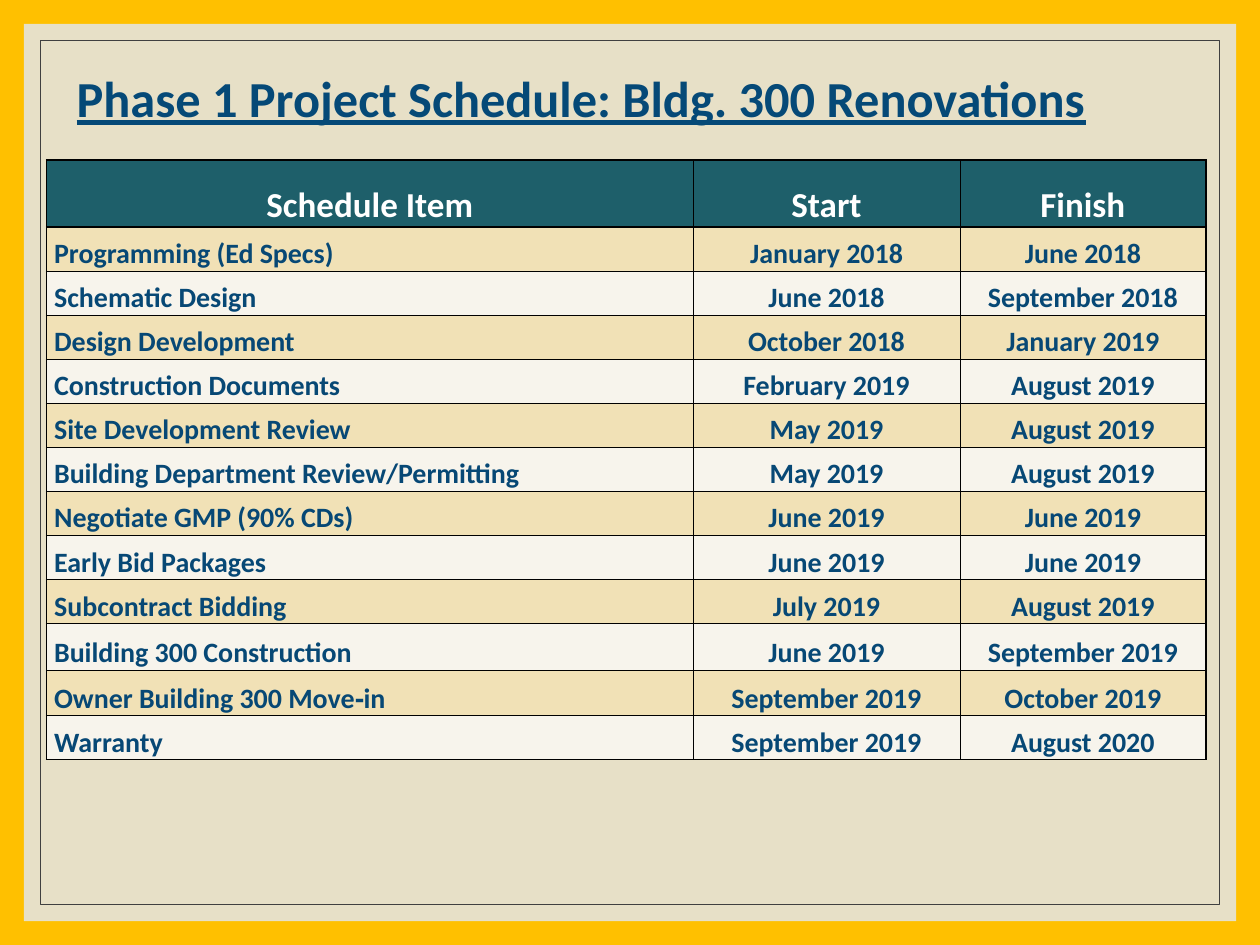
from lxml.etree import SubElement
from pptx import Presentation
from pptx.dml.color import RGBColor
from pptx.enum.shapes import MSO_SHAPE
from pptx.enum.text import MSO_ANCHOR, PP_ALIGN
from pptx.oxml.ns import qn
from pptx.util import Inches, Pt

COLORS = {
    "frame": "FFC000",
    "panel": "E7E0C7",
    "outline": "404040",
    "title": "054977",
    "header": "1E5F6A",
    "header_text": "FFFFFF",
    "body_text": "074875",
    "sand": "F6E2AE",
    "white": "FFFFFF",
    "border": "000000",
}
TITLE_FONT = {"name": "Calibri", "size": Pt(28.8), "bold": True, "underline": True}
HEADER_FONT = {"name": "Calibri", "size": Pt(20), "bold": True}
BODY_FONT = {"name": "Calibri", "size": Pt(16), "bold": True}
CELL_FORMAT = {
    "vertical_anchor": MSO_ANCHOR.BOTTOM,
    "margin_left": Inches(0.01),
    "margin_top": Inches(0.01),
    "margin_right": Inches(0.01),
    "margin_bottom": 0,
}
ITEM_INDENT = Inches(0.06)
BODY_ALPHA = 67
THIN, THICK = Pt(0.5), Pt(1)
COLUMN_WIDTHS = [5.13, 2.12, 1.95]
ROW_HEIGHTS = [0.53] + [0.35] * 9 + [0.37, 0.36, 0.35]
SCHEDULE = [
    ("Schedule Item", "Start", "Finish"),
    ("Programming (Ed Specs)", "January 2018", "June 2018"),
    ("Schematic Design", "June 2018", "September 2018"),
    ("Design Development", "October 2018", "January 2019"),
    ("Construction Documents", "February 2019", "August 2019"),
    ("Site Development Review", "May 2019", "August 2019"),
    ("Building Department Review/Permitting", "May 2019", "August 2019"),
    ("Negotiate GMP (90% CDs)", "June 2019", "June 2019"),
    ("Early Bid Packages", "June 2019", "June 2019"),
    ("Subcontract Bidding", "July 2019", "August 2019"),
    ("Building 300 Construction", "June 2019", "September 2019"),
    ("Owner Building 300 Move‐in", "September 2019", "October 2019"),
    ("Warranty", "September 2019", "August 2020"),
]


def rgb(name):
    """Return the named colour."""
    return RGBColor.from_string(COLORS[name])


def apply_format(target, values):
    """Set each attribute in values on the target."""
    for attribute, value in values.items():
        setattr(target, attribute, value)


def write_text(paragraph, wording, font, color, alignment):
    """Fill a paragraph with one formatted run."""
    paragraph.alignment = alignment
    run = paragraph.add_run()
    run.text = wording
    apply_format(run.font, font)
    run.font.color.rgb = rgb(color)


def add_backdrop(slide, left, top, width, height):
    """Place the panel and its thin inner outline in the given box."""
    slide.background.fill.solid()
    slide.background.fill.fore_color.rgb = rgb("frame")
    inset = Inches(0.13)
    panel = slide.shapes.add_shape(MSO_SHAPE.RECTANGLE, left, top, width, height)
    panel.fill.solid()
    panel.fill.fore_color.rgb = rgb("panel")
    panel.line.fill.background()
    outline = slide.shapes.add_shape(
        MSO_SHAPE.RECTANGLE, left + inset, top + inset, width - 2 * inset, height - 2 * inset
    )
    outline.fill.background()
    outline.line.color.rgb = rgb("outline")
    outline.line.width = THIN
    for rectangle in (panel, outline):
        rectangle.shadow.inherit = False


def add_title(slide, left, top, width, height):
    """Place the underlined slide title in the given box."""
    frame = slide.shapes.add_textbox(left, top, width, height).text_frame
    apply_format(frame, {"word_wrap": True, "vertical_anchor": MSO_ANCHOR.MIDDLE})
    heading = frame.paragraphs[0]
    heading.line_spacing = 0.9
    write_text(heading, "Phase 1 Project Schedule: Bldg. 300 Renovations",
               TITLE_FONT, "title", PP_ALIGN.LEFT)


def add_borders(cell, widths):
    """Draw the cell's borders from a dict of side to line width."""
    properties = cell._tc.get_or_add_tcPr()
    for side, width in widths.items():
        border = SubElement(properties, qn(f"a:ln{side}"), w=str(width))
        solid = SubElement(border, qn("a:solidFill"))
        SubElement(solid, qn("a:srgbClr"), val=COLORS["border"])


def fill_cell(cell, color, alpha):
    """Fill a cell with a colour at the given opacity in percent."""
    cell.fill.solid()
    cell.fill.fore_color.rgb = rgb(color)
    if alpha < 100:
        tint = cell._tc.tcPr.find(qn("a:solidFill")).find(qn("a:srgbClr"))
        SubElement(tint, qn("a:alpha"), val=str(alpha * 1000))


def format_cell(cell, wording, row, column):
    """Write and style one schedule cell by its row and column."""
    is_header = row == 0
    is_item = column == 0 and not is_header
    apply_format(cell, CELL_FORMAT)
    if is_item:
        cell.margin_left = ITEM_INDENT
    write_text(
        cell.text_frame.paragraphs[0],
        wording,
        HEADER_FONT if is_header else BODY_FONT,
        "header_text" if is_header else "body_text",
        PP_ALIGN.LEFT if is_item else PP_ALIGN.CENTER,
    )
    add_borders(cell, {
        "L": THICK if column == 0 else THIN,
        "R": THICK if column == len(COLUMN_WIDTHS) - 1 else THIN,
        "T": THICK if row <= 1 else THIN,
        "B": THICK if row in (0, len(SCHEDULE) - 1) else THIN,
    })
    if is_header:
        fill_cell(cell, "header", 100)
    else:
        fill_cell(cell, "sand" if row % 2 else "white", BODY_ALPHA)


def add_schedule(slide, left, top, width, height):
    """Place the schedule table in the given box."""
    table = slide.shapes.add_table(
        len(SCHEDULE), len(COLUMN_WIDTHS), left, top, width, height
    ).table
    for column, column_width in zip(table.columns, COLUMN_WIDTHS):
        column.width = Inches(column_width)
    for row, row_height in zip(table.rows, ROW_HEIGHTS):
        row.height = Inches(row_height)
    for row, entries in enumerate(SCHEDULE):
        for column, wording in enumerate(entries):
            format_cell(table.cell(row, column), wording, row, column)


def main():
    """Build and save the schedule slide."""
    deck = Presentation()
    deck.slide_width, deck.slide_height = Inches(10), Inches(7.5)
    slide = deck.slides.add_slide(deck.slide_layouts[6])
    add_backdrop(slide, Inches(0.19), Inches(0.19), Inches(9.62), Inches(7.12))
    add_title(slide, Inches(0.51), Inches(0.4), Inches(8.75), Inches(0.81))
    add_schedule(slide, Inches(0.37), Inches(1.27), Inches(9.2), Inches(4.75))
    deck.save("out.pptx")


if __name__ == "__main__":
    main()
